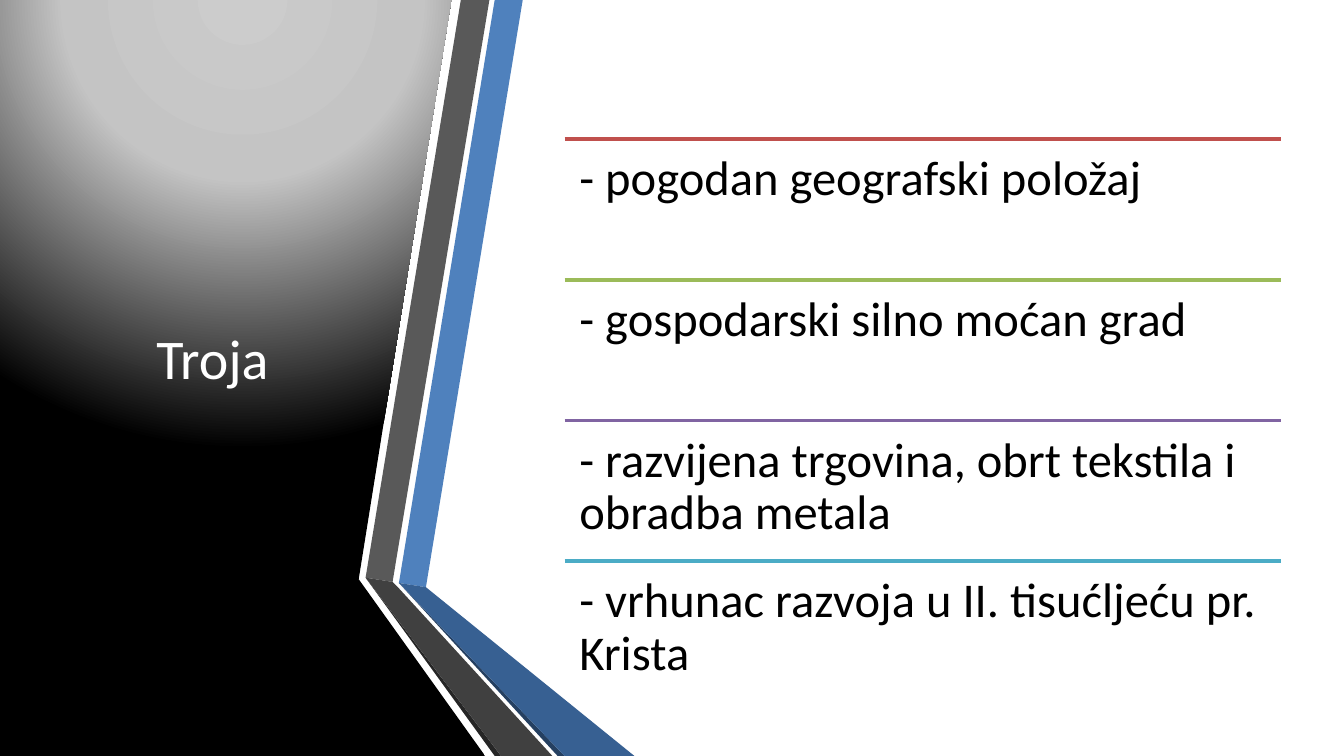
"""Build the Troja slide: a folded ribbon panel beside four ruled statements."""
from dataclasses import dataclass
from typing import Optional

from lxml.etree import SubElement
from pptx import Presentation
from pptx.dml.color import RGBColor
from pptx.enum.shapes import MSO_CONNECTOR
from pptx.enum.text import MSO_ANCHOR, MSO_AUTO_SIZE, PP_ALIGN
from pptx.oxml import parse_xml
from pptx.oxml.ns import nsdecls, qn
from pptx.shapes.autoshape import Shape
from pptx.slide import Slide
from pptx.text.text import TextFrame
from pptx.util import Cm, Pt

WIDTH, HEIGHT = 25.4, 14.29
LIST_LEFT, LIST_TOP, LIST_WIDTH, ROW_HEIGHT = 10.67, 2.63, 13.53, 2.66
GREY_FOLD, GREY_INNER = (6.91, 10.92), (7.42, 11)
BLUE_FOLD, BLUE_INNER = (7.54, 11.02), (8.05, 11.1)


@dataclass(frozen=True)
class Facet:
    color: str
    points: tuple[tuple[float, float], ...]


@dataclass(frozen=True)
class Statement:
    text: str
    rule_color: str


PANEL = ((0, 0), (8.53, 0), (6.78, 10.95), (9.17, HEIGHT), (0, HEIGHT))

RIBBON = (
    Facet("4F81BD", (BLUE_FOLD, BLUE_INNER, (9.88, 0), (9.35, 0))),
    Facet("595959", (GREY_FOLD, GREY_INNER, (9.25, 0), (8.71, 0))),
    Facet("262626", (GREY_FOLD, (9.35, HEIGHT), (9.47, HEIGHT))),
    Facet("254061", (BLUE_FOLD, (10.54, HEIGHT), (10.67, HEIGHT))),
    Facet("376092", (BLUE_FOLD, (10.67, HEIGHT), (11.99, HEIGHT), BLUE_INNER)),
    Facet("404040", (GREY_FOLD, (9.47, HEIGHT), (10.44, HEIGHT), (7.52, 11.1), GREY_INNER)),
)

STATEMENTS = (
    Statement("- pogodan geografski položaj", "C0504D"),
    Statement("- gospodarski silno moćan grad", "9BBB59"),
    Statement("- razvijena trgovina, obrt tekstila i obradba metala", "8064A2"),
    Statement("- vrhunac razvoja u II. tisućljeću pr. Krista", "4BACC6"),
)


def rgb(color: str) -> RGBColor:
    """Turn a hex string into a colour."""
    return RGBColor.from_string(color)


def write_text(
    frame: TextFrame,
    text: str,
    *,
    size: float,
    color: str,
    align: PP_ALIGN = PP_ALIGN.LEFT,
    anchor: MSO_ANCHOR = MSO_ANCHOR.TOP,
    line_spacing: float = 1.0,
    inset: Optional[float] = None,
) -> None:
    """Fill a text frame with one formatted paragraph."""
    frame.text = text
    frame.word_wrap = True
    frame.auto_size = MSO_AUTO_SIZE.NONE
    frame.vertical_anchor = anchor
    if inset is not None:
        frame.margin_left = frame.margin_right = Cm(inset)
        frame.margin_top = frame.margin_bottom = Cm(inset)
    paragraph = frame.paragraphs[0]
    paragraph.alignment = align
    paragraph.line_spacing = line_spacing
    font = paragraph.runs[0].font
    font.name = "Calibri"
    font.size = Pt(size)
    font.color.rgb = rgb(color)


def draw_facet(slide: Slide, facet: Facet) -> Shape:
    """Draw a closed, filled outline without a border."""
    start, *corners = [(Cm(x), Cm(y)) for x, y in facet.points]
    builder = slide.shapes.build_freeform(*start)
    builder.add_line_segments(corners, close=True)
    outline = builder.convert_to_shape()
    outline.shadow.inherit = False
    outline.fill.solid()
    outline.fill.fore_color.rgb = rgb(facet.color)
    outline.line.fill.background()
    return outline


def apply_spotlight(panel: Shape) -> None:
    """Replace the panel's fill with a circular glow from the top."""
    stops = "".join(
        f'<a:gs pos="{position * 1000}"><a:srgbClr val="{color}"/></a:gs>'
        for position, color in ((0, "CCCCCC"), (40, "C4C4C4"), (100, "000000"))
    )
    glow = parse_xml(
        f'<a:gradFill {nsdecls("a")} rotWithShape="1"><a:gsLst>{stops}</a:gsLst>'
        '<a:path path="circle"><a:fillToRect l="50000" t="-80000" r="50000" b="180000"/>'
        "</a:path></a:gradFill>"
    )
    properties = panel.element.spPr
    properties.replace(properties.find(qn("a:solidFill")), glow)


def draw_statement(slide: Slide, statement: Statement, top: float) -> None:
    """Draw a coloured rule with its statement below."""
    rule = slide.shapes.add_connector(
        MSO_CONNECTOR.STRAIGHT, Cm(LIST_LEFT), Cm(top), Cm(LIST_LEFT + LIST_WIDTH), Cm(top)
    )
    rule.line.color.rgb = rgb(statement.rule_color)
    rule.line.width = Pt(2)
    SubElement(rule.element.spPr, qn("a:effectLst"))
    caption = slide.shapes.add_textbox(Cm(LIST_LEFT), Cm(top), Cm(LIST_WIDTH), Cm(ROW_HEIGHT))
    write_text(
        caption.text_frame, statement.text, size=26, color="000000", line_spacing=0.9, inset=0.28
    )


def draw_title(slide: Slide, text: str) -> None:
    """Place the title placeholder in front of the panel."""
    title = slide.shapes.title
    title.left, title.top, title.width, title.height = Cm(1.12), Cm(1.43), Cm(5.79), Cm(10.64)
    write_text(
        title.text_frame,
        text,
        size=30,
        color="FFFFFF",
        align=PP_ALIGN.CENTER,
        anchor=MSO_ANCHOR.MIDDLE,
    )
    title.element.getparent().append(title.element)


def main() -> None:
    """Assemble and save the presentation."""
    presentation = Presentation()
    presentation.slide_width, presentation.slide_height = Cm(WIDTH), Cm(HEIGHT)
    slide = presentation.slides.add_slide(presentation.slide_layouts.get_by_name("Title Only"))
    apply_spotlight(draw_facet(slide, Facet("000000", PANEL)))
    for facet in RIBBON:
        draw_facet(slide, facet)
    draw_title(slide, "Troja")
    for row, statement in enumerate(STATEMENTS):
        draw_statement(slide, statement, LIST_TOP + row * ROW_HEIGHT)
    presentation.save("out.pptx")


if __name__ == "__main__":
    main()
